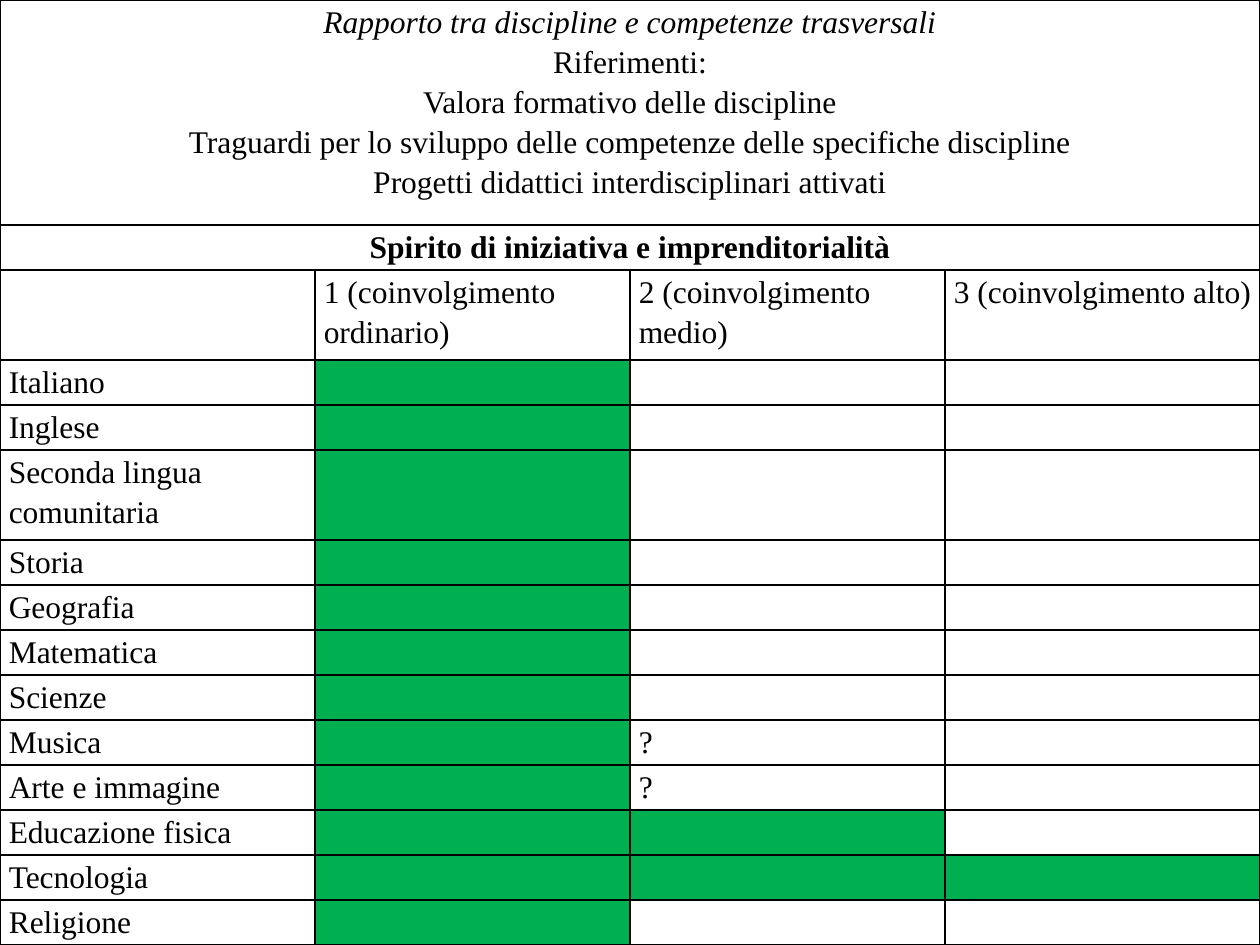
from lxml import etree
from pptx import Presentation
from pptx import util as u
from pptx.dml import color
from pptx.enum import text
from pptx.oxml import ns

BLANK_LAYOUT = 6
COLUMNS = 4

HEADING = [
    "Rapporto tra discipline e competenze trasversali",
    "Riferimenti:",
    "Valora formativo delle discipline",
    "Traguardi per lo sviluppo delle competenze delle specifiche discipline",
    "Progetti didattici interdisciplinari attivati",
]
COMPETENCE = "Spirito di iniziativa e imprenditorialità"
LEVELS = [
    "1 (coinvolgimento ordinario)",
    "2 (coinvolgimento medio)",
    "3 (coinvolgimento alto)",
]
# Subject, level of involvement, lines of text
SUBJECTS = [
    ("Italiano", 1, 1),
    ("Inglese", 1, 1),
    ("Seconda lingua comunitaria", 1, 2),
    ("Storia", 1, 1),
    ("Geografia", 1, 1),
    ("Matematica", 1, 1),
    ("Scienze", 1, 1),
    ("Musica", 1, 1),
    ("Arte e immagine", 1, 1),
    ("Educazione fisica", 2, 1),
    ("Tecnologia", 3, 1),
    ("Religione", 1, 1),
]
UNCERTAIN = {"Musica", "Arte e immagine"}


def rgb(value):
    return color.RGBColor.from_string(value)


def write(paragraph, content, size=18, font="Times New Roman", hue="000000",
          bold=False, italic=False, centered=False):
    paragraph.line_spacing = 1.15
    paragraph.alignment = text.PP_ALIGN.CENTER if centered else text.PP_ALIGN.LEFT
    if not content:
        # Keeps the height of an empty line equal to a written one
        end = etree.SubElement(paragraph._p, ns.qn("a:endParaRPr"))
        end.set("sz", str(size * 100))
        return
    run = paragraph.add_run()
    run.text = content
    run.font.name = font
    run.font.size = u.Pt(size)
    run.font.bold = bold
    run.font.italic = italic
    run.font.color.rgb = rgb(hue)


class SlideBuilder:
    line_color = "000000"
    level_color = "00B050"
    cell_color = "FFFFFF"

    def __init__(self, presentation):
        self.presentation = presentation
        layout = presentation.slide_layouts[BLANK_LAYOUT]
        self.slide = presentation.slides.add_slide(layout)

    def table(self, row_lines):
        """Full-slide table whose row heights follow their lines of text."""
        width = self.presentation.slide_width
        height = self.presentation.slide_height
        frame = self.slide.shapes.add_table(
            len(row_lines), COLUMNS, 0, 0, width, height)
        table = frame.table
        table.first_row = table.horz_banding = False
        for column in table.columns:
            column.width = width // COLUMNS
        for row, lines in zip(table.rows, row_lines):
            row.height = height * lines // sum(row_lines)
        for cell in table.iter_cells():
            self.style_cell(cell)
        return table

    def style_cell(self, cell):
        cell.margin_left = cell.margin_right = u.Inches(0.07)
        cell.margin_top = cell.margin_bottom = 0
        properties = cell._tc.get_or_add_tcPr()
        for side in ("lnL", "lnR", "lnT", "lnB"):
            line = etree.SubElement(properties, ns.qn("a:" + side), w=str(u.Pt(1)))
            fill = etree.SubElement(line, ns.qn("a:solidFill"))
            etree.SubElement(fill, ns.qn("a:srgbClr"), val=self.line_color)
        self.fill(cell, self.cell_color)

    def fill(self, cell, hue):
        cell.fill.solid()
        cell.fill.fore_color.rgb = rgb(hue)

    def banner(self, table, row, lines, **formats):
        """Row merged across all columns, one paragraph per line."""
        cell = table.cell(row, 0)
        cell.merge(table.cell(row, COLUMNS - 1))
        frame = cell.text_frame
        for index, content in enumerate(lines):
            paragraph = frame.add_paragraph() if index else frame.paragraphs[0]
            style = formats if index == 0 else {}
            write(paragraph, content, centered=True, **style)

    def row(self, table, row, contents, level=0):
        """Row of plain cells, coloured up to the level of involvement."""
        for column, content in enumerate(contents):
            cell = table.cell(row, column)
            write(cell.text_frame.paragraphs[0], content)
            if 1 <= column <= level:
                self.fill(cell, self.level_color)


def main():
    presentation = Presentation()
    presentation.slide_width = u.Inches(10)
    presentation.slide_height = u.Inches(7.5)
    builder = SlideBuilder(presentation)

    # Grid: heading, competence, levels, then the subjects
    row_lines = [len(HEADING), 1, 2] + [lines for _, _, lines in SUBJECTS]
    table = builder.table(row_lines)

    # Heading rows
    builder.banner(table, 0, HEADING, italic=True)
    builder.banner(table, 1, [COMPETENCE], bold=True)
    builder.row(table, 2, [""] + LEVELS)

    # Subjects and their involvement
    for row, (subject, level, _) in enumerate(SUBJECTS, start=3):
        mark = "?" if subject in UNCERTAIN else ""
        builder.row(table, row, [subject, "", mark, ""], level)

    presentation.save("out.pptx")


if __name__ == "__main__":
    main()
